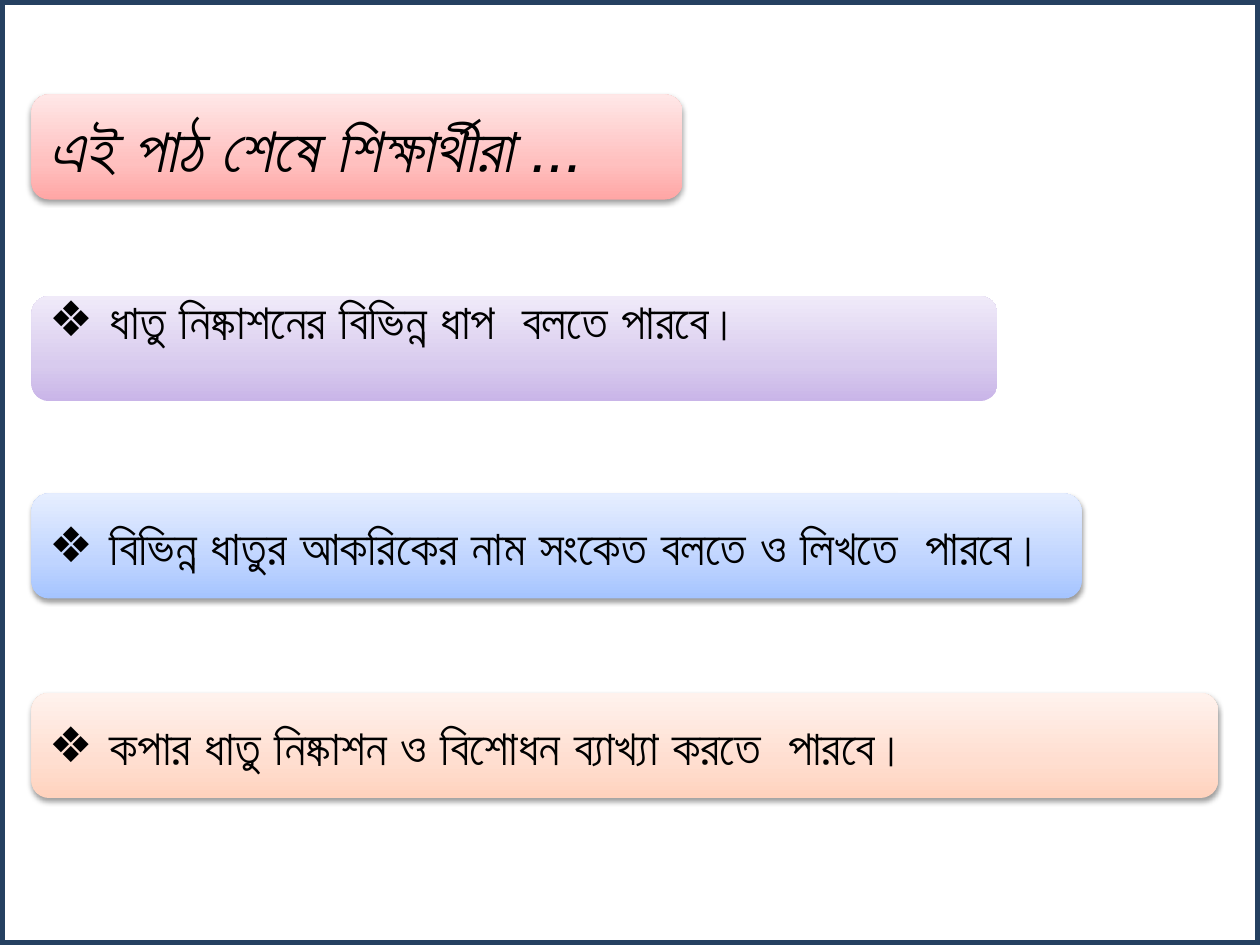
from copy import deepcopy
from dataclasses import dataclass

from lxml.etree import SubElement
from pptx import Presentation
from pptx.dml.color import RGBColor
from pptx.enum.shapes import MSO_SHAPE as Preset
from pptx.enum.text import MSO_ANCHOR as Anchor, PP_ALIGN as Align
from pptx.oxml.ns import qn
from pptx.util import Pt

EMU_PER_PX = 7620


def px(length):
    return length * EMU_PER_PX


def apply(target, values):
    for name, value in values.items():
        setattr(target, name, value)


@dataclass(frozen=True)
class Theme:
    font: str = "Arial"
    ink: str = "000000"
    border: str = "254061"
    heading_size: int = 36
    goal_size: int = 28
    border_width: int = 6
    rose: tuple = ("FFA6A5", "FFC0BF", "FFE7E7")
    violet: tuple = ("C9B5E8", "D8CBEE", "F0EAF9")
    blue: tuple = ("A4C4FF", "BFD4FF", "E6EEFF")
    peach: tuple = ("FFD2BD", "FFDED0", "FFF2ED")
    stops: tuple = (0, 0.35, 1)


class LessonSlide:
    card_left = 30
    card_height = 100
    bullet_indent = 45

    def __init__(self, slide, theme):
        self.slide = slide
        self.theme = theme

    def shape(self, preset, left, top, width, height):
        shape = self.slide.shapes.add_shape(preset, px(left), px(top), px(width), px(height))
        shape.shadow.inherit = False
        return shape

    def gradient(self, shape, colors):
        shape.fill.gradient()
        shape.fill.gradient_angle = 90
        stop_list = shape._element.spPr.find(qn("a:gradFill")).find(qn("a:gsLst"))
        stop_list.append(deepcopy(stop_list[-1]))
        for stop, color, position in zip(shape.fill.gradient_stops, colors, self.theme.stops):
            stop.color.rgb = RGBColor.from_string(color)
            stop.position = position

    def drop_shadow(self, shape):
        effects = shape._element.spPr.find(qn("a:effectLst"))
        shadow = SubElement(effects, qn("a:outerShdw"), blurRad="40000", dist="20000",
                            dir="5400000", rotWithShape="0")
        color = SubElement(shadow, qn("a:srgbClr"), val=self.theme.ink)
        SubElement(color, qn("a:alpha"), val="38000")

    def bullet(self, paragraph):
        properties = paragraph._p.get_or_add_pPr()
        properties.set("marL", str(px(self.bullet_indent)))
        properties.set("indent", str(-px(self.bullet_indent)))
        SubElement(properties, qn("a:buFont"), typeface=self.theme.font)
        SubElement(properties, qn("a:buChar"), char="❖")

    def card(self, top, width, colors, wording, size, italic=None,
             bulleted=True, shadowed=True, bottom_inset=6):
        card = self.shape(Preset.ROUNDED_RECTANGLE, self.card_left, top, width, self.card_height)
        self.gradient(card, colors)
        card.line.fill.background()
        if shadowed:
            self.drop_shadow(card)
        apply(card.text_frame, {"word_wrap": True, "vertical_anchor": Anchor.MIDDLE,
                                "margin_bottom": px(bottom_inset)})
        paragraph = card.text_frame.paragraphs[0]
        paragraph.alignment = Align.LEFT
        if bulleted:
            self.bullet(paragraph)
        run = paragraph.add_run()
        run.text = wording
        apply(run.font, {"name": self.theme.font, "size": Pt(size), "italic": italic})
        run.font.color.rgb = RGBColor.from_string(self.theme.ink)
        SubElement(run._r.get_or_add_rPr(), qn("a:cs"), typeface=self.theme.font)

    def border(self, width, height):
        border = self.shape(Preset.RECTANGLE, 0, 0, width, height)
        border.fill.background()
        border.line.width = Pt(self.theme.border_width)
        border.line.color.rgb = RGBColor.from_string(self.theme.border)


def main():
    width, height = 1200, 900
    deck = Presentation()
    apply(deck, {"slide_width": px(width), "slide_height": px(height)})
    theme = Theme()
    lesson = LessonSlide(deck.slides.add_slide(deck.slide_layouts[6]), theme)

    goals = [
        (282, 920, theme.violet, " ধাতু নিষ্কাশনের বিভিন্ন ধাপ  বলতে পারবে।",
         {"shadowed": False, "bottom_inset": 61}),
        (470, 1000, theme.blue, " বিভিন্ন ধাতুর আকরিকের নাম সংকেত বলতে ও লিখতে  পারবে।", {}),
        (660, 1130, theme.peach, " কপার ধাতু নিষ্কাশন ও বিশোধন ব্যাখ্যা করতে  পারবে।", {}),
    ]
    for top, card_width, colors, goal, options in goals:
        lesson.card(top, card_width, colors, goal, theme.goal_size, **options)
    lesson.card(90, 620, theme.rose, "এই পাঠ শেষে শিক্ষার্থীরা ...", theme.heading_size,
                italic=True, bulleted=False)
    lesson.border(width, height)
    deck.save("out.pptx")


if __name__ == "__main__":
    main()
